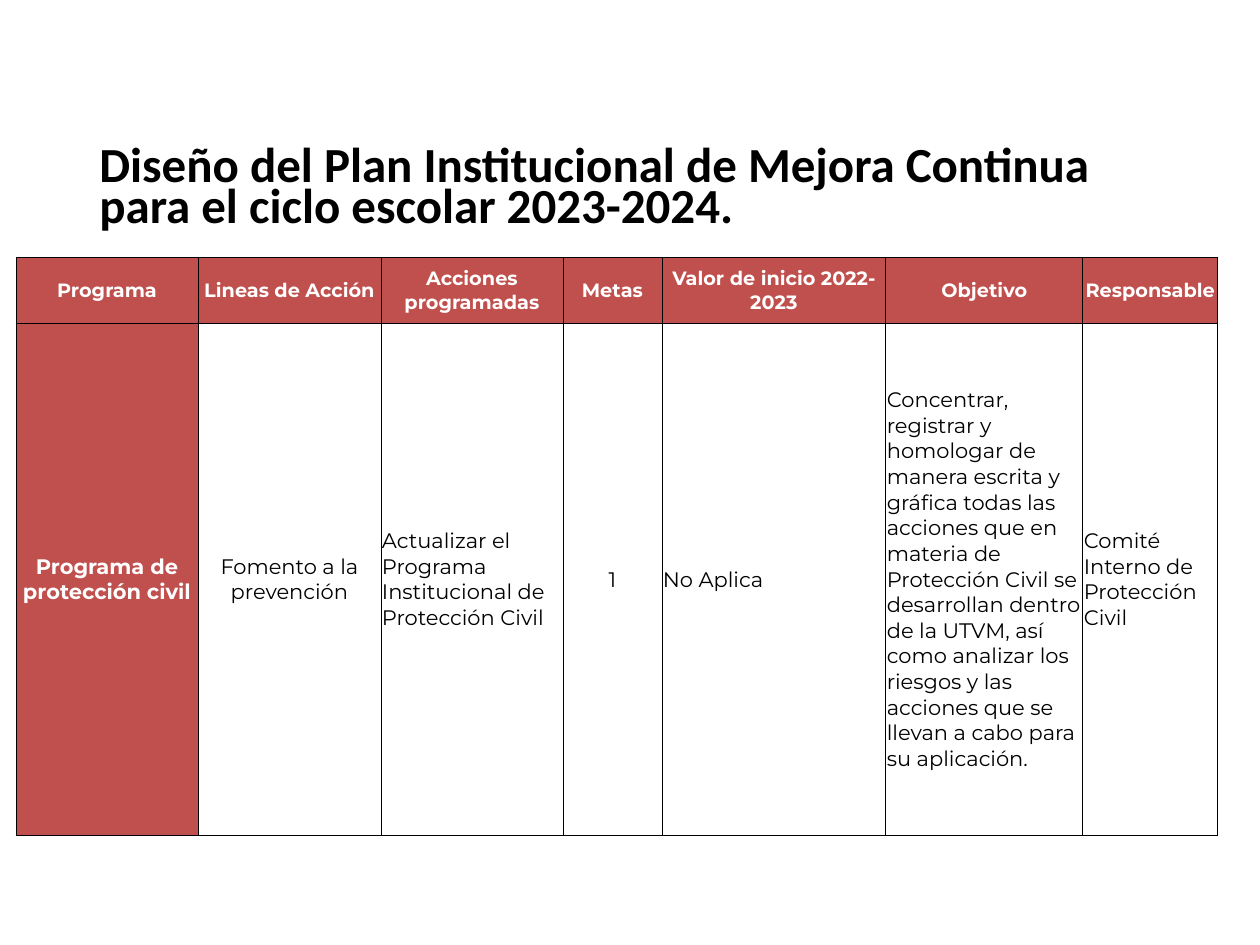
"""Build the slide with the continuous improvement plan for 2023-2024."""
import pptx
import pptx.dml.color
import pptx.enum.shapes
import pptx.enum.text
import pptx.oxml
import pptx.oxml.ns
import pptx.util

ALIGN = pptx.enum.text.PP_ALIGN
MIDDLE = pptx.enum.text.MSO_ANCHOR.MIDDLE
COLORS = {"black": "000000", "white": "FFFFFF", "red": "C0504D"}
PX = 914400 / 126

HEADING = "Diseño del Plan Institucional de Mejora Continua para el ciclo escolar 2023-2024."
HEADING_BOX = (87, 140, 1086, 101)
PLAN_ORIGIN = (16, 257)
ROW_HEIGHTS = (66, 512)
COLUMNS = [
    ("Programa", 182, "Programa de protección civil", ALIGN.CENTER),
    ("Lineas de Acción", 183, "Fomento a la prevención", ALIGN.CENTER),
    ("Acciones programadas", 182,
     "Actualizar el Programa Institucional de Protección Civil", ALIGN.LEFT),
    ("Metas", 99, "1", ALIGN.CENTER),
    ("Valor de inicio 2022-2023", 224, "No Aplica", ALIGN.LEFT),
    ("Objetivo", 197,
     "Concentrar, registrar y homologar de manera escrita y gráfica todas las "
     "acciones que en materia de Protección Civil se desarrollan dentro de la "
     "UTVM, así como analizar los riesgos y las acciones que se llevan a cabo "
     "para su aplicación.", ALIGN.LEFT),
    ("Responsable", 135, "Comité Interno de Protección Civil", ALIGN.LEFT),
]


def px(length):
    return pptx.util.Emu(round(length * PX))


def rgb(name):
    return pptx.dml.color.RGBColor.from_string(COLORS[name])


def write(frame, text, *, size, font="Montserrat", color="black", bold=False,
          align=ALIGN.LEFT, spacing=None):
    frame.word_wrap = True
    frame.vertical_anchor = MIDDLE
    paragraph = frame.paragraphs[0]
    paragraph.alignment = align
    paragraph.line_spacing = spacing
    run = paragraph.add_run()
    run.text = text
    run.font.name = font
    run.font.size = pptx.util.Pt(size)
    run.font.bold = bold
    run.font.color.rgb = rgb(color)


def add_borders(cell):
    properties = cell._tc.get_or_add_tcPr()
    for position, side in enumerate(("lnL", "lnR", "lnT", "lnB")):
        properties.insert(position, pptx.oxml.parse_xml(
            f'<a:{side} {pptx.oxml.ns.nsdecls("a")} w="{pptx.util.Pt(0.5)}">'
            f'<a:solidFill><a:srgbClr val="{COLORS["black"]}"/></a:solidFill></a:{side}>'))


def add_heading(slide):
    heading = slide.shapes.add_shape(
        pptx.enum.shapes.MSO_SHAPE.RECTANGLE, *map(px, HEADING_BOX))
    heading.shadow.inherit = False
    heading.fill.solid()
    heading.fill.fore_color.rgb = rgb("white")
    heading.line.fill.background()
    write(heading.text_frame, HEADING, size=28, font="Calibri", bold=True, spacing=0.7)


def fill_cell(cell, text, accent, size, align):
    cell.margin_left = cell.margin_right = cell.margin_top = px(1)
    cell.margin_bottom = 0
    if accent:
        cell.fill.solid()
        cell.fill.fore_color.rgb = rgb("red")
    else:
        cell.fill.background()
    add_borders(cell)
    write(cell.text_frame, text, size=size, bold=accent, align=align,
          color="white" if accent else "black")
    cell.vertical_anchor = MIDDLE


def add_plan(slide):
    width = sum(column[1] for column in COLUMNS)
    plan = slide.shapes.add_table(
        len(ROW_HEIGHTS), len(COLUMNS),
        *map(px, (*PLAN_ORIGIN, width, sum(ROW_HEIGHTS)))).table
    for row, height in zip(plan.rows, ROW_HEIGHTS):
        row.height = px(height)
    for index, (title, column_width, detail, align) in enumerate(COLUMNS):
        plan.columns[index].width = px(column_width)
        fill_cell(plan.cell(0, index), title, True, 11, ALIGN.CENTER)
        fill_cell(plan.cell(1, index), detail, index == 0, 12, align)


def main():
    deck = pptx.Presentation()
    deck.slide_width, deck.slide_height = px(1260), px(945)
    slide = deck.slides.add_slide(deck.slide_layouts[6])
    add_heading(slide)
    add_plan(slide)
    deck.save("out.pptx")


if __name__ == "__main__":
    main()
